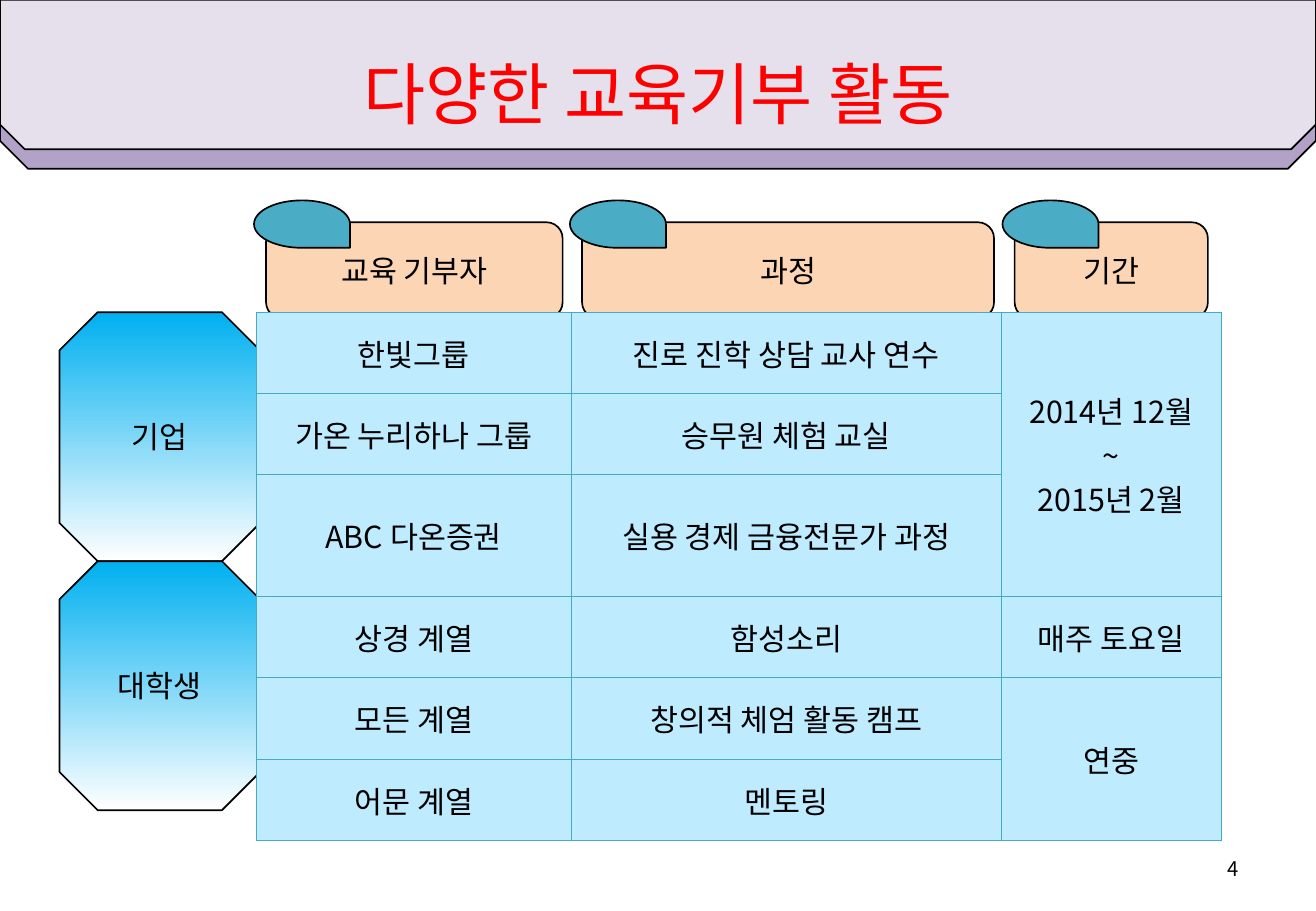
from lxml import etree
from pptx import Presentation
from pptx.dml.color import RGBColor
from pptx.enum.shapes import MSO_SHAPE
from pptx.enum.text import MSO_ANCHOR, PP_ALIGN
from pptx.oxml.ns import qn
from pptx.util import Inches, Pt

SNIPPED, ROUNDED = MSO_SHAPE.SNIP_2_SAME_RECTANGLE, MSO_SHAPE.ROUNDED_RECTANGLE
TEAR, OCTAGON = MSO_SHAPE.TEAR, MSO_SHAPE.OCTAGON
MIDDLE = MSO_ANCHOR.MIDDLE
CENTER, RIGHT = PP_ALIGN.CENTER, PP_ALIGN.RIGHT

FONT = "Noto Sans CJK KR"
BLACK, WHITE, RED = "000000", "FFFFFF", "FF0000"
LILAC, PURPLE, PEACH, TEAL = "E6E0EC", "B3A2C7", "FCD5B5", "4BACC6"
SKY, CELL_BLUE, BORDER = "00B0F0", "BFEBFF", "46AAC5"

WIDTH = 10.83
HEADERS = [("교육 기부자", 2.19, 2.44), ("과정", 4.79, 3.39), ("기간", 8.35, 1.59)]
GROUPS = ["기업", "대학생"]
COLUMNS = [2.59, 3.54, 1.81]
ROWS = [
    ("한빛그룹", "진로 진학 상담 교사 연수", "2014년 12월\n~\n2015년 2월"),
    ("가온 누리하나 그룹", "승무원 체험 교실", ""),
    ("ABC 다온증권", "실용 경제 금융전문가 과정", ""),
    ("상경 계열", "함성소리", "매주 토요일"),
    ("모든 계열", "창의적 체엄 활동 캠프", "연중"),
    ("어문 계열", "멘토링", ""),
]
PERIOD_SPANS = [(0, 2), (4, 5)]


def rgb(color):
    return RGBColor.from_string(color)


def write(tf, text, size=18, color=BLACK, align=CENTER):
    tf.text = text
    tf.word_wrap = True
    for p in tf.paragraphs:
        p.alignment = align
        p.font.size = Pt(size)
        p.font.color.rgb = rgb(color)
        p.font.name = FONT
        # Korean glyphs take the East Asian typeface
        etree.SubElement(p.font._rPr, qn("a:ea"), typeface=FONT)


def add_shape(s, kind, x, y, w, h, fill=None, text="", flip=False):
    sp = s.shapes.add_shape(kind, Inches(x), Inches(y), Inches(w), Inches(h))
    sp.shadow.inherit = False
    if fill:
        sp.fill.solid()
        sp.fill.fore_color.rgb = rgb(fill)
    sp.line.color.rgb = rgb(BLACK)
    sp.line.width = Pt(1)
    if flip:
        sp._element.spPr.get_or_add_xfrm().set("flipV", "1")
    if text:
        write(sp.text_frame, text)
        sp.text_frame.vertical_anchor = MIDDLE
    return sp


def add_banner(s, w, title):
    for h, fill in ((1.39, PURPLE), (1.23, LILAC)):
        add_shape(s, SNIPPED, 0, 0, w, h, fill, flip=True)
    sp = s.shapes.title
    sp.left, sp.top = Inches(0.54), Inches(0.14)
    sp.width, sp.height = Inches(w - 1.08), Inches(1.25)
    write(sp.text_frame, title, 40, RED)
    sp.text_frame.vertical_anchor = MIDDLE
    s.shapes._spTree.append(sp._element)  # in front of the banner


def add_header(s, x, y, w, h, text):
    add_shape(s, ROUNDED, x, y, w, h, PEACH, text)
    add_shape(s, TEAR, x - 0.1, y - 0.18, 0.79, 0.39, TEAL, flip=True)


def add_group(s, x, y, w, h, text):
    sp = add_shape(s, OCTAGON, x, y, w, h, text=text)
    sp.adjustments[0] = 0.19
    sp.fill.gradient()
    sp.fill.gradient_angle = 270
    for stop, position, color in zip(sp.fill.gradient_stops, (0, 1), (SKY, WHITE)):
        stop.position = position
        stop.color.rgb = rgb(color)


def add_borders(cell):
    tcPr = cell._tc.get_or_add_tcPr()
    for i, side in enumerate(("lnL", "lnR", "lnT", "lnB")):
        ln = etree.Element(qn(f"a:{side}"), w=str(Pt(0.75)))
        fill = etree.SubElement(ln, qn("a:solidFill"))
        etree.SubElement(fill, qn("a:srgbClr"), val=BORDER)
        tcPr.insert(i, ln)


def add_activity_table(s, x, y, row_h):
    frame = s.shapes.add_table(len(ROWS), len(COLUMNS), Inches(x), Inches(y),
                               Inches(sum(COLUMNS)), Inches(row_h * len(ROWS)))
    table = frame.table
    table.first_row = table.horz_banding = False
    for column, w in zip(table.columns, COLUMNS):
        column.width = Inches(w)
    for i, row in enumerate(ROWS):
        table.rows[i].height = Inches(row_h)
        for j, text in enumerate(row):
            cell = table.cell(i, j)
            write(cell.text_frame, text)
            cell.vertical_anchor = MIDDLE
            cell.fill.solid()
            cell.fill.fore_color.rgb = rgb(CELL_BLUE)
            add_borders(cell)
    for first, last in PERIOD_SPANS:
        table.cell(first, 2).merge(table.cell(last, 2))


def add_page_number(s, x, y, w, h, number):
    tf = s.shapes.add_textbox(Inches(x), Inches(y), Inches(w), Inches(h)).text_frame
    write(tf, number, 12, align=RIGHT)
    tf.vertical_anchor = MIDDLE


def main():
    prs = Presentation()
    prs.slide_width, prs.slide_height = Inches(WIDTH), Inches(7.5)
    s = prs.slides.add_slide(prs.slide_layouts[5])
    add_banner(s, WIDTH, "다양한 교육기부 활동")
    add_page_number(s, 7.76, 6.95, 2.53, 0.4, "4")
    for text, x, w in HEADERS:
        add_header(s, x, 1.83, w, 0.79, text)
    for i, text in enumerate(GROUPS):
        add_group(s, 0.49, 2.57 + i * 2.05, 1.65, 2.05, text)
    add_activity_table(s, 2.11, 2.57, 0.67)
    prs.save("out.pptx")


if __name__ == "__main__":
    main()
